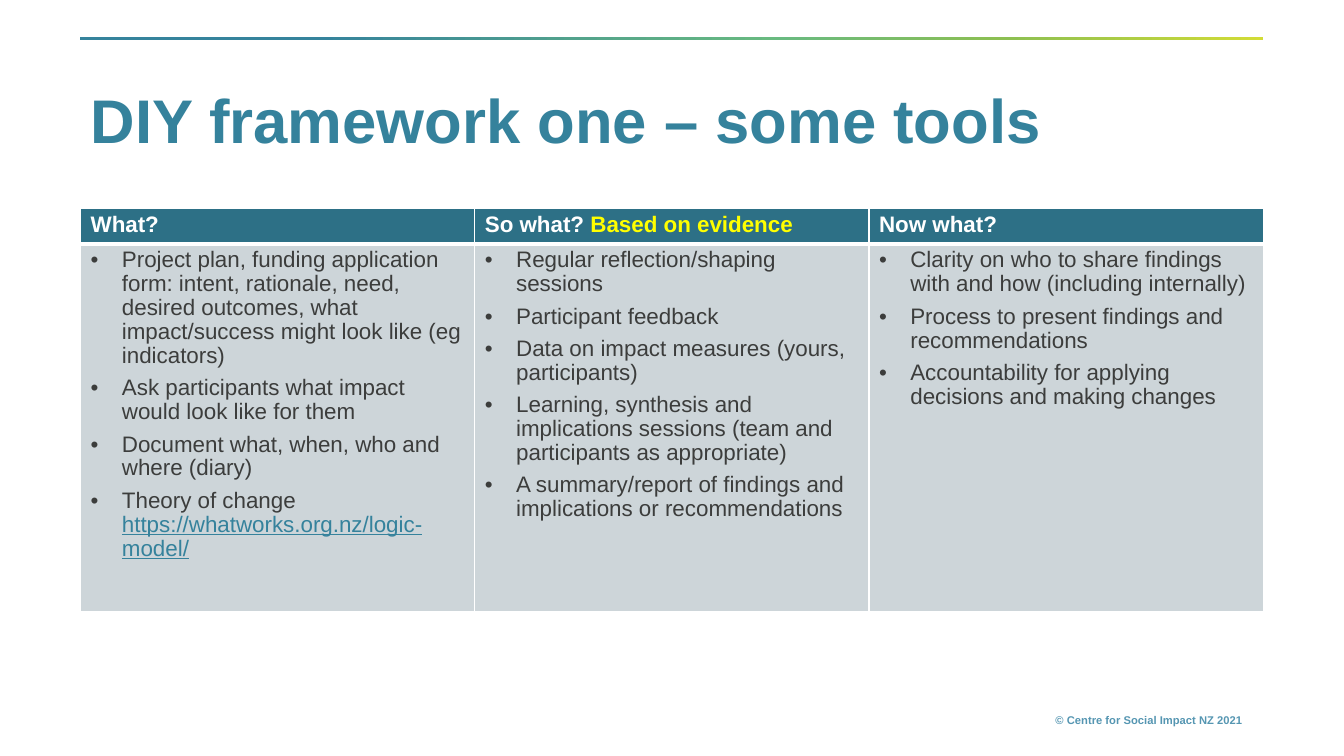
from dataclasses import dataclass

from lxml import etree
from pptx import Presentation
from pptx import util as u
from pptx.dml.color import RGBColor
from pptx.enum import shapes, text
from pptx.oxml import ns


@dataclass(frozen=True)
class Theme:
    font: str = "Arial"
    teal: str = "35829C"
    header: str = "2D7086"
    body: str = "CDD5D9"
    ink: str = "3C3D3C"
    white: str = "FFFFFF"
    accent: str = "FFFF00"
    footer: str = "5596B2"
    rule: tuple = ((0, "35839C"), (20, "35839C"), (59, "69BA80"),
                   (78, "8CBF52"), (100, "D2DC36"))
    title_size: int = 44
    table_size: int = 16
    footer_size: int = 8


def add_xml(parent, tag, **attrs):
    child = etree.SubElement(parent, ns.qn(tag))
    for name, value in attrs.items():
        child.set(name, str(value))
    return child


def write(p, content, font, size, color, bold=False, underline=False):
    r = p.add_run()
    r.text = content
    r.font.name, r.font.size = font, u.Pt(size)
    r.font.bold, r.font.underline = bold, underline
    r.font.color.rgb = RGBColor.from_string(color)


class Deck:
    """Places elements on a grid of 100 columns by 100 rows."""

    def __init__(self, theme):
        self.theme = theme
        self.prs = Presentation()
        self.prs.slide_width, self.prs.slide_height = u.Inches(13.33), u.Inches(7.5)
        self.s = self.prs.slides.add_slide(self.prs.slide_layouts[6])

    def cols(self, n):
        return round(self.prs.slide_width * n / 100)

    def rows(self, n):
        return round(self.prs.slide_height * n / 100)

    def place(self, left, top, width, height):
        return self.cols(left), self.rows(top), self.cols(width), self.rows(height)

    def rule(self, *box):
        sp = self.s.shapes.add_shape(shapes.MSO_SHAPE.RECTANGLE, *self.place(*box))
        sp.shadow.inherit = False
        sp.line.fill.background()
        sp.fill.gradient()
        sp.fill.gradient_angle = 0
        stops = sp.element.spPr.find(".//" + ns.qn("a:gsLst"))
        for stop in list(stops):
            stops.remove(stop)
        for share, color in self.theme.rule:
            stop = add_xml(stops, "a:gs", pos=share * 1000)
            add_xml(stop, "a:srgbClr", val=color)

    def label(self, content, *box, align=text.PP_ALIGN.LEFT, spacing=1.0, **fmt):
        tf = self.s.shapes.add_textbox(*self.place(*box)).text_frame
        tf.word_wrap = True
        tf.vertical_anchor = text.MSO_ANCHOR.MIDDLE
        p = tf.paragraphs[0]
        p.alignment, p.line_spacing = align, spacing
        write(p, content, self.theme.font, bold=True, **fmt)

    def table(self, headings, columns, *box, header_rows):
        left, top, width, height = box
        frame = self.s.shapes.add_table(2, len(headings), *self.place(*box))
        table = frame.table
        for col in table.columns:
            col.width = self.cols(width / len(headings))
        table.rows[0].height = self.rows(header_rows)
        table.rows[1].height = self.rows(height - header_rows)
        for i, (heading, items) in enumerate(zip(headings, columns)):
            self.cell(table.cell(0, i), [heading], self.theme.header, bottom=3, bold=True)
            self.cell(table.cell(1, i), items, self.theme.body, top=3, bullets=True)

    def cell(self, cell, paragraphs, fill, top=1, bottom=1, bullets=False, bold=False):
        """Fill a cell; each paragraph is a list of (text, color, underline) runs."""
        tcPr = cell._tc.get_or_add_tcPr()
        for side, width in zip("LRTB", (1, 1, top, bottom)):
            ln = add_xml(tcPr, "a:ln" + side, w=u.Pt(width))
            add_xml(add_xml(ln, "a:solidFill"), "a:srgbClr", val=self.theme.white)
        cell.fill.solid()
        cell.fill.fore_color.rgb = RGBColor.from_string(fill)
        tf = cell.text_frame
        for i, runs in enumerate(paragraphs):
            p = tf.add_paragraph() if i else tf.paragraphs[0]
            p.line_spacing = 0.96
            if bullets:
                p.space_after = u.Pt(6)
                pPr = p._p.get_or_add_pPr()
                pPr.set("marL", str(u.Inches(0.31)))
                pPr.set("indent", str(-u.Inches(0.31)))
                add_xml(pPr, "a:buFont", typeface=self.theme.font)
                add_xml(pPr, "a:buChar", char="•")
            for content, color, underline in runs:
                write(p, content, self.theme.font, self.theme.table_size, color,
                      bold=bold, underline=underline)


def main():
    theme = Theme()
    deck = Deck(theme)

    def plain(content, color=theme.ink):
        return [(content, color, False)]

    headings = [
        plain("What?", theme.white),
        plain("So what? ", theme.white) + plain("Based on evidence", theme.accent),
        plain("Now what?", theme.white),
    ]
    what = [plain(t) for t in (
        "Project plan, funding application form: intent, rationale, need, desired "
        "outcomes, what impact/success might look like (eg indicators)",
        "Ask participants what impact would look like for them",
        "Document what, when, who and where (diary)",
    )]
    what.append(plain("Theory of change ")
                + [("https://whatworks.org.nz/logic-model/", theme.teal, True)])
    so_what = [plain(t) for t in (
        "Regular reflection/shaping sessions",
        "Participant feedback",
        "Data on impact measures (yours, participants)",
        "Learning, synthesis and implications sessions (team and participants as appropriate)",
        "A summary/report of findings and implications or recommendations",
    )]
    now_what = [plain(t) for t in (
        "Clarity on who to share findings with and how (including internally)",
        "Process to present findings and recommendations",
        "Accountability for applying decisions and making changes",
    )]

    deck.label("© Centre for Social Impact NZ 2021", 66.7, 93.7, 26.5, 3.2,
               align=text.PP_ALIGN.RIGHT, size=theme.footer_size, color=theme.footer)
    deck.rule(5.95, 4.93, 88.05, 0.4)
    deck.label("DIY framework one – some tools", 6, 10.27, 88, 12.27,
               spacing=0.9, size=theme.title_size, color=theme.teal)
    deck.table(headings, [what, so_what, now_what], 6, 27.5, 88, 53.2, header_rows=4.6)
    deck.prs.save("out.pptx")


if __name__ == "__main__":
    main()
